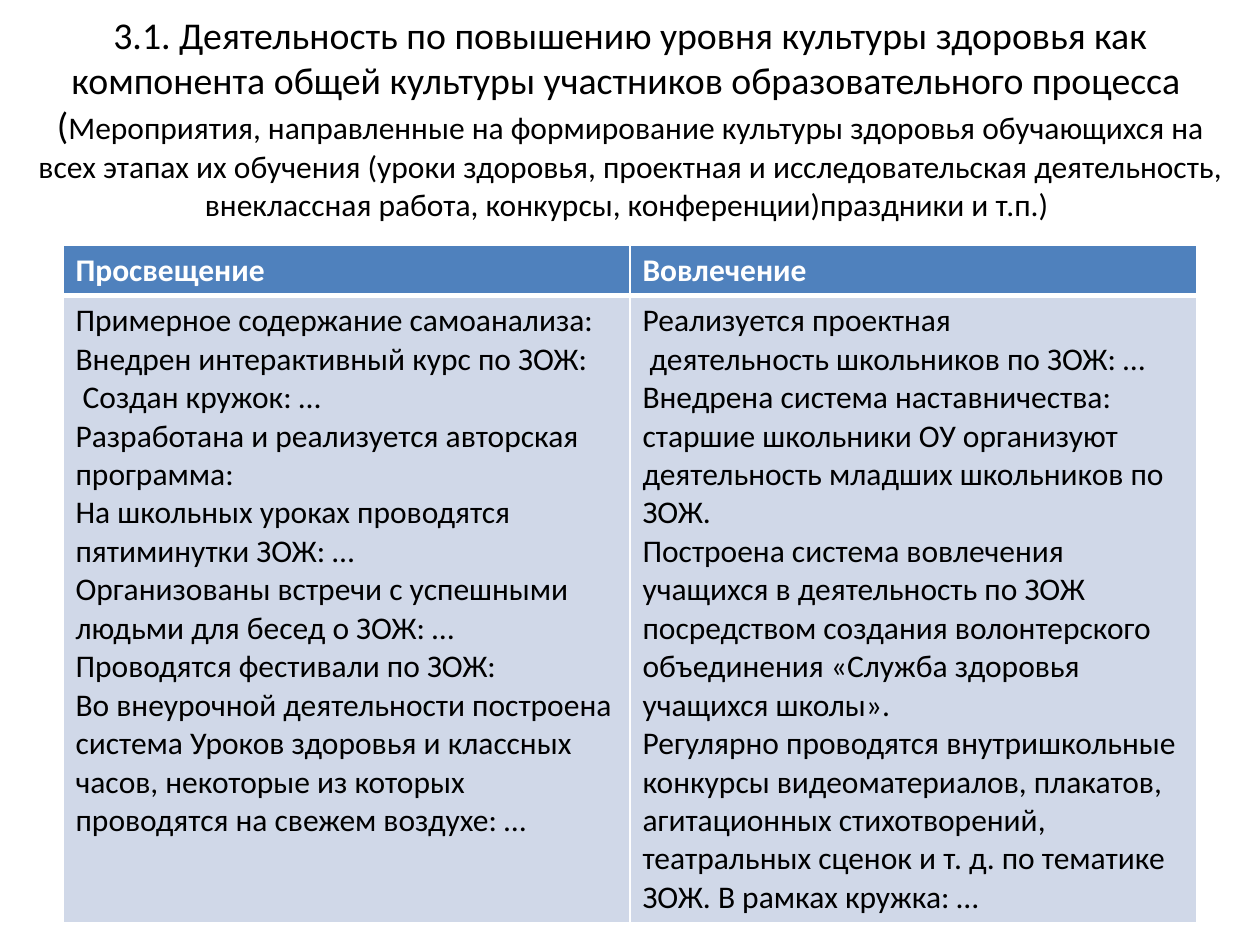
import lxml.etree
import pptx
import pptx.dml.color
import pptx.enum.text
import pptx.oxml.ns
import pptx.util

PX = 914400 // 126
FONT = "Calibri"
COLORS = {"text": "000000", "header": "4F81BD", "body": "D0D8E8", "white": "FFFFFF"}
COLUMNS = {
    "Просвещение": [
        "Примерное содержание самоанализа: Внедрен интерактивный курс по ЗОЖ:",
        " Cоздан кружок: …",
        "Разработана и реализуется авторская программа:",
        "На школьных уроках проводятся пятиминутки ЗОЖ: …",
        "Организованы встречи с успешными людьми для бесед о ЗОЖ: …",
        "Проводятся фестивали по ЗОЖ:",
        "Во внеурочной деятельности построена система Уроков здоровья и классных "
        "часов, некоторые из которых проводятся на свежем воздухе: …",
    ],
    "Вовлечение": [
        "Реализуется проектная",
        " деятельность школьников по ЗОЖ: …",
        "Внедрена система наставничества: старшие школьники ОУ организуют "
        "деятельность младших школьников по ЗОЖ.",
        "Построена система вовлечения учащихся в деятельность по ЗОЖ посредством "
        "создания волонтерского объединения «Служба здоровья учащихся школы».",
        "Регулярно проводятся внутришкольные конкурсы видеоматериалов, плакатов, "
        "агитационных стихотворений, театральных сценок и т. д. по тематике ЗОЖ. "
        "В рамках кружка: …",
    ],
}


def add_run(paragraph, text, size, color, bold=False):
    run = paragraph.add_run()
    run.text = text
    run.font.name = FONT
    run.font.size = pptx.util.Pt(size)
    run.font.bold = bold
    run.font.color.rgb = pptx.dml.color.RGBColor.from_string(COLORS[color])


def style_cell(cell, fill, widths):
    """Fill the cell and draw white borders; widths maps edge tags to points."""
    properties = cell._tc.get_or_add_tcPr()
    for edge, width in widths.items():
        line = lxml.etree.SubElement(
            properties, pptx.oxml.ns.qn(f"a:{edge}"), w=str(pptx.util.Pt(width)))
        solid = lxml.etree.SubElement(line, pptx.oxml.ns.qn("a:solidFill"))
        lxml.etree.SubElement(
            solid, pptx.oxml.ns.qn("a:srgbClr"), val=COLORS["white"])
    cell.fill.solid()
    cell.fill.fore_color.rgb = pptx.dml.color.RGBColor.from_string(COLORS[fill])


presentation = pptx.Presentation()
presentation.slide_width = pptx.util.Inches(10)
presentation.slide_height = pptx.util.Inches(7.5)
slide = presentation.slides.add_slide(presentation.slide_layouts[6])

# Title
title = slide.shapes.add_textbox(25 * PX, 38 * PX, 1211 * PX, 158 * PX)
title.text_frame.word_wrap = True
title.text_frame.vertical_anchor = pptx.enum.text.MSO_ANCHOR.MIDDLE
paragraph = title.text_frame.paragraphs[0]
paragraph.alignment = pptx.enum.text.PP_ALIGN.CENTER
add_run(paragraph, "3.1. Деятельность по повышению уровня культуры здоровья как "
        "компонента общей культуры участников образовательного процесса ", 21.6, "text")
paragraph.add_line_break()
add_run(paragraph, "(", 21.6, "text")
add_run(paragraph, "Мероприятия, направленные на формирование культуры здоровья "
        "обучающихся на всех этапах их обучения (уроки здоровья, проектная и "
        "исследовательская деятельность, внеклассная работа, конкурсы, "
        "конференции)праздники и т.п.) ", 18, "text")

# Table
table = slide.shapes.add_table(2, 2, 63 * PX, 245 * PX, 1134 * PX, 677 * PX).table
table.rows[0].height = 50 * PX
table.rows[1].height = 627 * PX
for column, (heading, items) in enumerate(COLUMNS.items()):
    table.columns[column].width = 567 * PX
    header, body = table.cell(0, column), table.cell(1, column)
    style_cell(header, "header", {"lnL": 1, "lnR": 1, "lnT": 1, "lnB": 3})
    style_cell(body, "body", {"lnL": 1, "lnR": 1, "lnT": 3, "lnB": 1})
    add_run(header.text_frame.paragraphs[0], heading, 18, "white", bold=True)
    for index, item in enumerate(items):
        frame = body.text_frame
        paragraph = frame.add_paragraph() if index else frame.paragraphs[0]
        add_run(paragraph, item, 18, "text")

presentation.save("out.pptx")
